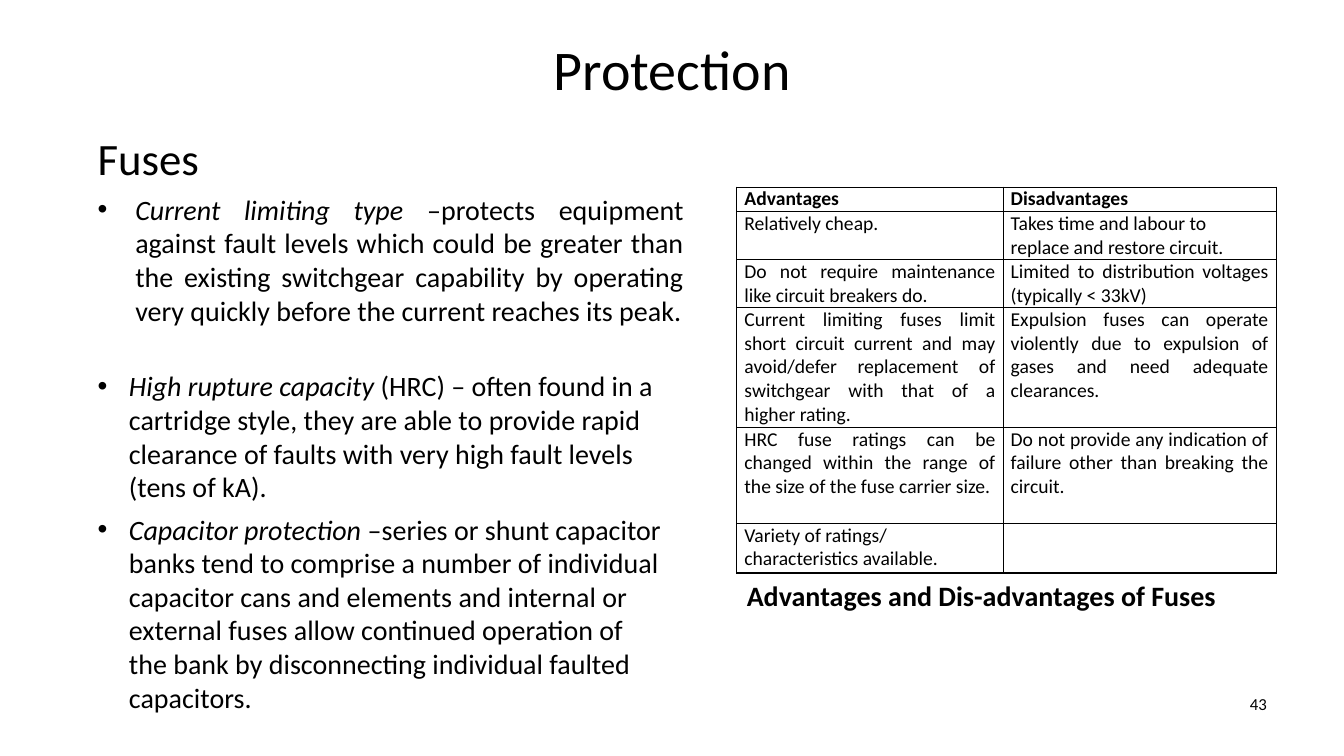
"""Build the slide on fuse protection with its advantages table."""
from dataclasses import dataclass

from lxml.etree import SubElement
from pptx import Presentation
from pptx.dml.color import RGBColor
from pptx.enum.text import MSO_ANCHOR, PP_ALIGN
from pptx.oxml.ns import qn
from pptx.slide import Slide
from pptx.util import Cm, Pt

COLORS = {"ink": "000000", "page": "FFFFFF"}
FACE = "Calibri"


@dataclass
class Label:
    box: tuple[float, float, float, float]
    text: str
    size: int
    lead: str = ""
    bold: bool = False
    align: PP_ALIGN = PP_ALIGN.LEFT
    anchor: MSO_ANCHOR = MSO_ANCHOR.TOP
    indent: float = 0


@dataclass
class Row:
    height: float
    pro: str
    con: str
    left: tuple[bool, bool] = (False, False)
    bold: bool = False


LABELS = [
    Label((1.7, 0.3, 30.48, 2.84), "Protection", 40,
          align=PP_ALIGN.CENTER, anchor=MSO_ANCHOR.MIDDLE),
    Label((2.21, 3.18, 28.88, 13.11), "Fuses", 32),
    Label((24.28, 17.35, 7.9, 1.32), "43", 12, align=PP_ALIGN.RIGHT),
    Label((2.21, 4.72, 15.27, 3.68),
          " –protects equipment against fault levels which could be greater than "
          "the existing switchgear capability by operating very quickly before "
          "the current reaches its peak.",
          20, "Current limiting type", align=PP_ALIGN.JUSTIFY, indent=0.95),
    Label((2.21, 9.17, 14.88, 4.45),
          " (HRC) – often found in a cartridge style, they are able to provide "
          "rapid clearance of faults with very high fault levels (tens of kA).",
          20, "High rupture capacity", indent=0.79),
    Label((2.21, 12.78, 14.71, 5.38),
          " –series or shunt capacitor banks tend to comprise a number of "
          "individual capacitor cans and elements and internal or external fuses "
          "allow continued operation of the bank by disconnecting individual "
          "faulted capacitors.",
          20, "Capacitor protection", indent=0.79),
    Label((18.57, 14.45, 13.61, 1.12), "Advantages and Dis-advantages of Fuses",
          20, bold=True),
]

WIDTHS = (6.71, 6.88)
ROWS = [
    Row(0.61, "Advantages", "Disadvantages", bold=True),
    Row(1.21, "Relatively cheap.",
        "Takes time and labour to replace and restore circuit.", (False, True)),
    Row(1.21, "Do not require maintenance like circuit breakers do.",
        "Limited to distribution voltages (typically < 33kV)"),
    Row(3.02, "Current limiting fuses limit short circuit current and may "
        "avoid/defer replacement of switchgear with that of a higher rating.",
        "Expulsion fuses can operate violently due to expulsion of gases and "
        "need adequate clearances."),
    Row(2.42, "HRC fuse ratings can be changed within the range of the size of "
        "the fuse carrier size.",
        "Do not provide any indication of failure other than breaking the circuit."),
    Row(1.25, "Variety of ratings/ characteristics available.", "", (True, False)),
]


def style(para, size: int, bold: bool, align: PP_ALIGN) -> None:
    para.alignment = align
    font = para.font
    font.name, font.size, font.bold = FACE, Pt(size), bold
    font.color.rgb = RGBColor.from_string(COLORS["ink"])


def draw_label(slide: Slide, label: Label) -> None:
    frame = slide.shapes.add_textbox(*map(Cm, label.box)).text_frame
    frame.word_wrap = True
    frame.vertical_anchor = label.anchor
    para = frame.paragraphs[0]
    if label.indent:
        props = para._p.get_or_add_pPr()
        props.set("marL", str(Cm(label.indent)))
        props.set("indent", str(-Cm(label.indent)))
        SubElement(props, qn("a:buFont"), typeface="Arial")
        SubElement(props, qn("a:buChar"), char="•")
    style(para, label.size, label.bold, label.align)
    if label.lead:
        lead = para.add_run()
        lead.text = label.lead
        lead.font.italic = True
    para.add_run().text = label.text


def draw_cell(cell, text: str, bold: bool, left: bool) -> None:
    cell.margin_left = cell.margin_right = Cm(0.19)
    cell.margin_top = cell.margin_bottom = 0
    props = cell._tc.get_or_add_tcPr()
    for side in ("lnL", "lnR", "lnT", "lnB"):
        line = SubElement(props, qn(f"a:{side}"), w=str(Pt(1)))
        fill = SubElement(line, qn("a:solidFill"))
        SubElement(fill, qn("a:srgbClr"), val=COLORS["ink"])
    cell.fill.background()
    para = cell.text_frame.paragraphs[0]
    style(para, 14, bold, PP_ALIGN.LEFT if left else PP_ALIGN.JUSTIFY)
    if text:
        para.add_run().text = text


def draw_table(slide: Slide, rows: list[Row]) -> None:
    height = sum(row.height for row in rows)
    frame = slide.shapes.add_table(len(rows), len(WIDTHS), Cm(18.57), Cm(4.72),
                                   Cm(sum(WIDTHS)), Cm(height))
    table = frame.table
    table.first_row = table.horz_banding = False
    for col, width in zip(table.columns, WIDTHS):
        col.width = Cm(width)
    for line, row in zip(table.rows, rows):
        line.height = Cm(row.height)
        for cell, text, left in zip(line.cells, (row.pro, row.con), row.left):
            draw_cell(cell, text, row.bold, left)


def main() -> None:
    deck = Presentation()
    deck.slide_width, deck.slide_height = Cm(33.87), Cm(19.05)
    slide = deck.slides.add_slide(deck.slide_layouts[6])
    back = slide.background.fill
    back.solid()
    back.fore_color.rgb = RGBColor.from_string(COLORS["page"])
    for label in LABELS:
        draw_label(slide, label)
    draw_table(slide, ROWS)
    deck.save("out.pptx")


if __name__ == "__main__":
    main()
